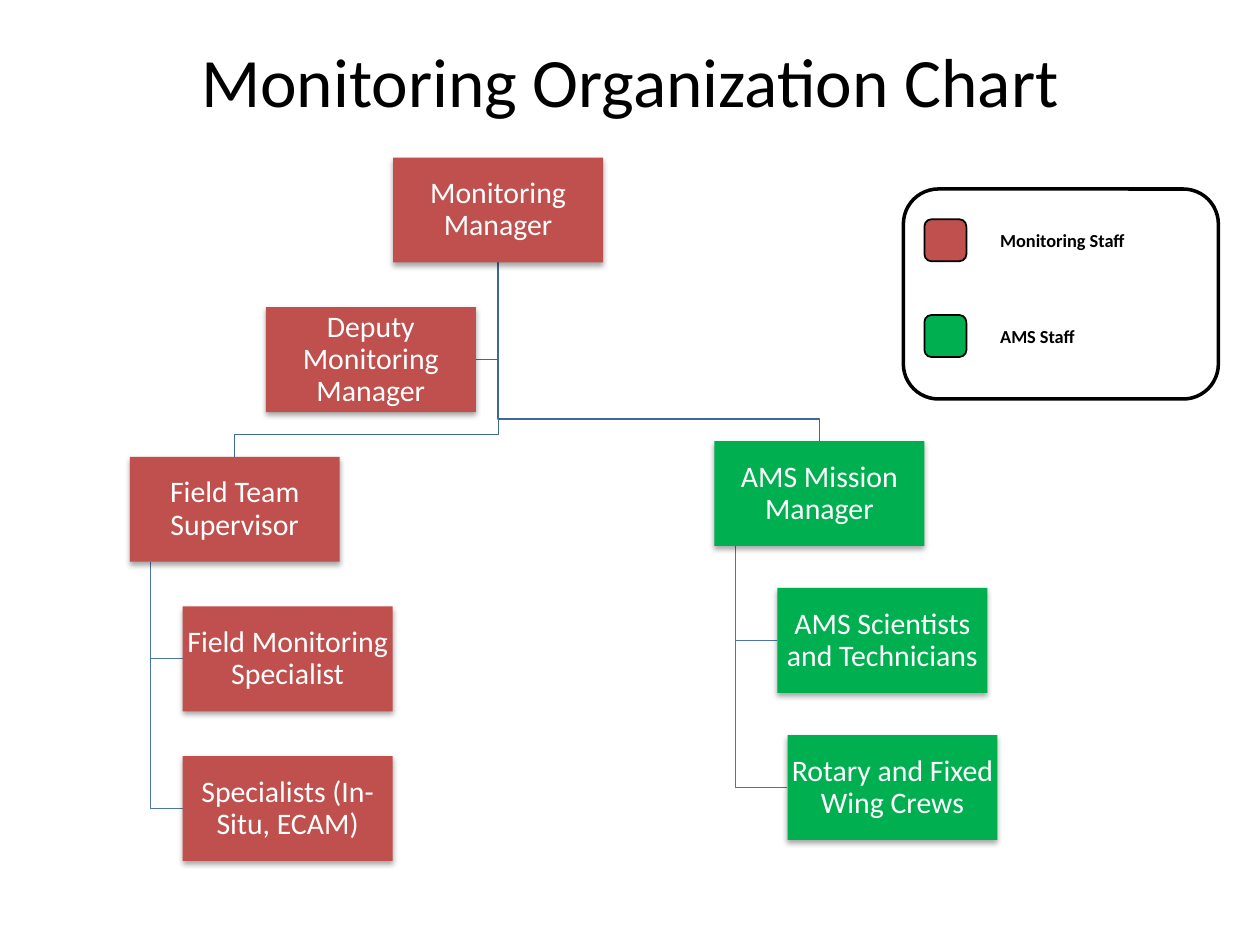
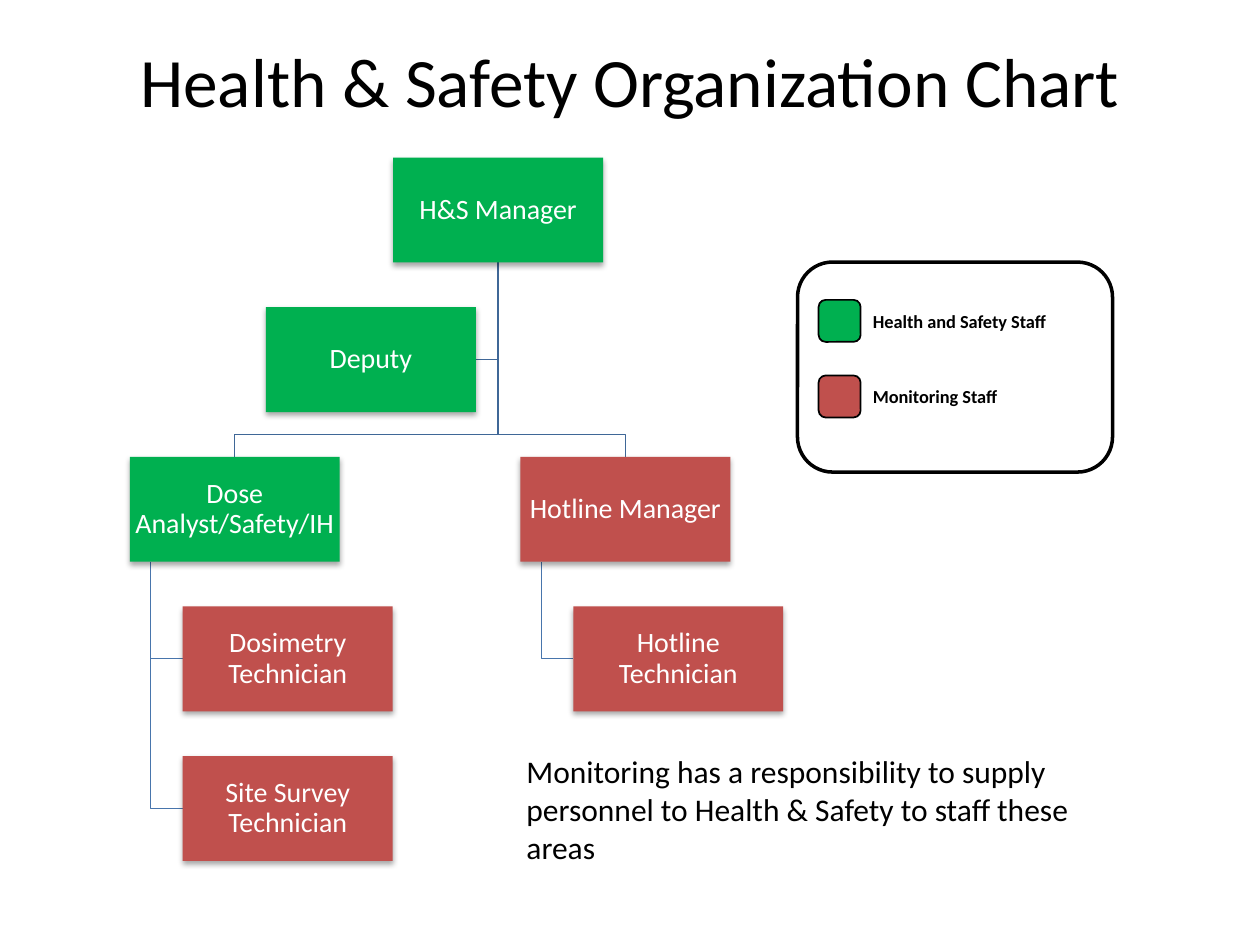
from lxml.etree import SubElement
from pptx import Presentation
from pptx.dml.color import RGBColor
from pptx.enum.shapes import MSO_SHAPE
from pptx.enum.text import MSO_ANCHOR, MSO_AUTO_SIZE, PP_ALIGN
from pptx.oxml.ns import qn
from pptx.util import Inches, Pt

RED, GREEN, BLACK, WHITE = "C0504D", "00B050", "000000", "FFFFFF"
TRUNK_LINE, BRANCH_LINE = "3F6797", "4875AC"
FONT = "Calibri"

# Chart grid, in inches
BOX_WIDTH, BOX_HEIGHT = 5 / 3, 5 / 6
TOP, ROW = 1.25, 1.1875
MANAGER_LEFT, DEPUTY_LEFT = 3.12, 2.11
BUS_GAP = 0.175
INDENT = 0.42
SWATCH = 1 / 3
LEGEND_SIZE = (2.5, 5 / 3)

# A branch lists its boxes as (text, colour, indent), its head first
SLIDES = [
    {
        "title": "Monitoring Organization Chart",
        "text_size": 17,
        "manager": ("Monitoring Manager", RED),
        "deputy": ("Deputy Monitoring Manager", RED),
        "branches": [
            {"left": 5.67, "top": 3.5, "row": 1.125, "boxes": [
                ("AMS Mission Manager", GREEN, 0),
                ("AMS Scientists and Technicians", GREEN, 0.5),
                ("Rotary and Fixed Wing Crews", GREEN, 0.58)]},
            {"left": 1.03, "top": TOP + 2 * ROW, "row": ROW, "boxes": [
                ("Field Team Supervisor", RED, 0),
                ("Field Monitoring Specialist", RED, INDENT),
                ("Specialists (In-Situ, ECAM)", RED, INDENT)]},
        ],
        "legend": {"at": (7.17, 1.5), "text_indent": 0.67, "entries": [
            ("Monitoring Staff", RED, 0.24), ("AMS Staff", GREEN, 1.0)]},
    },
    {
        "title": "Health & Safety Organization Chart",
        "text_size": 16,
        "manager": ("H&S Manager", GREEN),
        "deputy": ("Deputy", GREEN),
        "branches": [
            {"left": 4.13, "top": TOP + 2 * ROW, "row": ROW, "boxes": [
                ("Hotline Manager", RED, 0),
                ("Hotline Technician", RED, INDENT)]},
            {"left": 1.03, "top": TOP + 2 * ROW, "row": ROW, "boxes": [
                ("Dose Analyst/Safety/IH", GREEN, 0),
                ("Dosimetry Technician", RED, INDENT),
                ("Site Survey Technician", RED, INDENT)]},
        ],
        "legend": {"at": (6.33, 2.08), "text_indent": 0.5, "entries": [
            ("Health and Safety Staff", GREEN, 0.3),
            ("Monitoring Staff", RED, 0.9)]},
        "note": "Monitoring has a responsibility to supply personnel to "
                "Health & Safety to staff these areas",
    },
]
SLIDES[0]["branches"][0]["row"] = 7 / 6


def color(hex_string):
    return RGBColor.from_string(hex_string)


def write(shape, text, size, text_color=BLACK, bold=False, align=None,
          line_spacing=None, **frame_format):
    frame = shape.text_frame
    frame.text = text
    frame_format = {"word_wrap": True, "auto_size": MSO_AUTO_SIZE.NONE} | frame_format
    for name, value in frame_format.items():
        setattr(frame, name, value)
    paragraph = frame.paragraphs[0]
    paragraph.alignment = align
    paragraph.line_spacing = line_spacing
    font = paragraph.runs[0].font
    for name, value in {"name": FONT, "size": Pt(size), "bold": bold}.items():
        setattr(font, name, value)
    font.color.rgb = color(text_color)


def add_text(slide, text, box, size, bold=False):
    write(slide.shapes.add_textbox(*map(Inches, box)), text, size, bold=bold)


def add_panel(slide, kind, box, fill, line_width=0):
    shape = slide.shapes.add_shape(kind, *map(Inches, box))
    shape.shadow.inherit = False
    shape.fill.solid()
    shape.fill.fore_color.rgb = color(fill)
    if line_width:
        shape.line.color.rgb = color(BLACK)
        shape.line.width = Pt(line_width)
    else:
        shape.line.fill.background()
    return shape


def add_soft_shadow(shape):
    effects = shape._element.spPr.find(qn("a:effectLst"))
    shadow = SubElement(effects, qn("a:outerShdw"), blurRad="40000", dist="23000",
                        dir="5400000", rotWithShape="0")
    black = SubElement(shadow, qn("a:srgbClr"), val=BLACK)
    SubElement(black, qn("a:alpha"), val="35000")


def add_box(slide, text, fill, left, top, size):
    shape = add_panel(slide, MSO_SHAPE.RECTANGLE, (left, top, BOX_WIDTH, BOX_HEIGHT), fill)
    add_soft_shadow(shape)
    margins = {f"margin_{side}": Inches(0.01) for side in ("left", "top", "right", "bottom")}
    write(shape, text, size, WHITE, align=PP_ALIGN.CENTER, line_spacing=0.9,
          vertical_anchor=MSO_ANCHOR.MIDDLE, **margins)


def add_path(slide, points, line_color):
    """Draw an open bent line through the points."""
    start, *rest = [(Inches(x), Inches(y)) for x, y in points]
    builder = slide.shapes.build_freeform(*start)
    builder.add_line_segments(rest, close=False)
    shape = builder.convert_to_shape()
    shape.shadow.inherit = False
    shape.fill.background()
    shape.line.color.rgb = color(line_color)
    shape.line.width = Pt(0.75)


def add_chart_tree(slide, content):
    trunk_x, trunk_y = MANAGER_LEFT + BOX_WIDTH / 2, TOP + BOX_HEIGHT
    deputy_top = TOP + ROW
    deputy_middle = deputy_top + BOX_HEIGHT / 2
    boxes = [(*content["manager"], MANAGER_LEFT, TOP),
             (*content["deputy"], DEPUTY_LEFT, deputy_top)]
    add_path(slide, [(trunk_x, trunk_y), (trunk_x, deputy_middle),
                     (DEPUTY_LEFT + BOX_WIDTH, deputy_middle)], TRUNK_LINE)
    for branch in content["branches"]:
        left, top = branch["left"], branch["top"]
        head_x, bus_y = left + BOX_WIDTH / 2, top - BUS_GAP
        add_path(slide, [(trunk_x, trunk_y), (trunk_x, bus_y),
                         (head_x, bus_y), (head_x, top)], TRUNK_LINE)
        stem_x = left + BOX_WIDTH / 10
        for index, (text, fill, indent) in enumerate(branch["boxes"]):
            box_top = top + index * branch["row"]
            boxes.append((text, fill, left + indent, box_top))
            if index:
                middle = box_top + BOX_HEIGHT / 2
                add_path(slide, [(stem_x, top + BOX_HEIGHT), (stem_x, middle),
                                 (left + indent, middle)], BRANCH_LINE)
    for box in boxes:
        add_box(slide, *box, content["text_size"])


def add_legend(slide, legend):
    left, top = legend["at"]
    add_panel(slide, MSO_SHAPE.ROUNDED_RECTANGLE, (left, top, *LEGEND_SIZE), WHITE, 2)
    for label, fill, offset in legend["entries"]:
        add_panel(slide, MSO_SHAPE.ROUNDED_RECTANGLE,
                  (left + SWATCH / 2, top + offset, SWATCH, SWATCH), fill, 1)
        add_text(slide, label, (left + legend["text_indent"], top + offset + 0.03, 1.83, 0.28),
                 10.5, bold=True)


def add_title(slide, text):
    title = slide.shapes.title
    box = dict(zip(("left", "top", "width", "height"), map(Inches, (0.5, 0.3, 9, 1.25))))
    for name, value in box.items():
        setattr(title, name, value)
    write(title, text, 39.6, align=PP_ALIGN.CENTER,
          vertical_anchor=MSO_ANCHOR.TOP, margin_top=0)


def main():
    presentation = Presentation()
    presentation.slide_width, presentation.slide_height = Inches(10), Inches(7.5)
    for content in SLIDES:
        slide = presentation.slides.add_slide(presentation.slide_layouts[5])
        add_title(slide, content["title"])
        add_chart_tree(slide, content)
        add_legend(slide, content["legend"])
        if "note" in content:
            add_text(slide, content["note"], (4.08, 5.92, 4.67, 1.01), 18)
    presentation.save("out.pptx")


if __name__ == "__main__":
    main()
